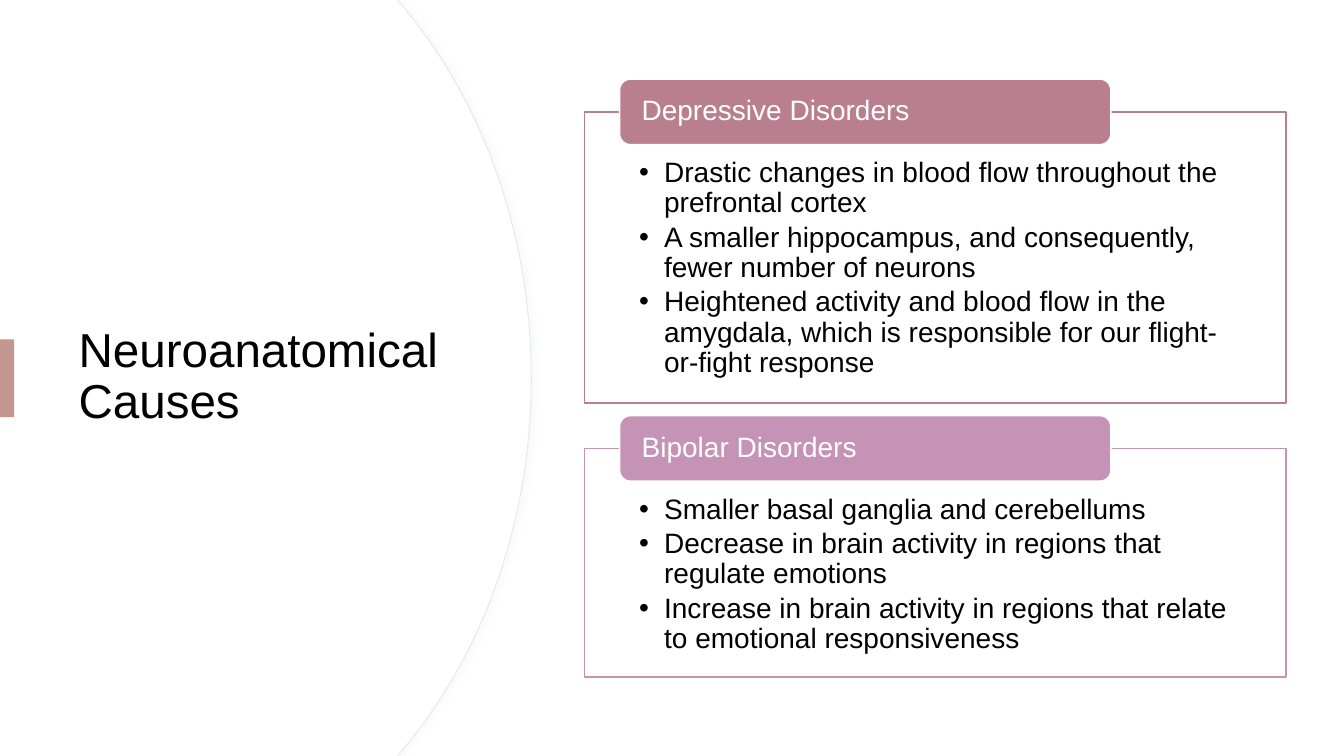
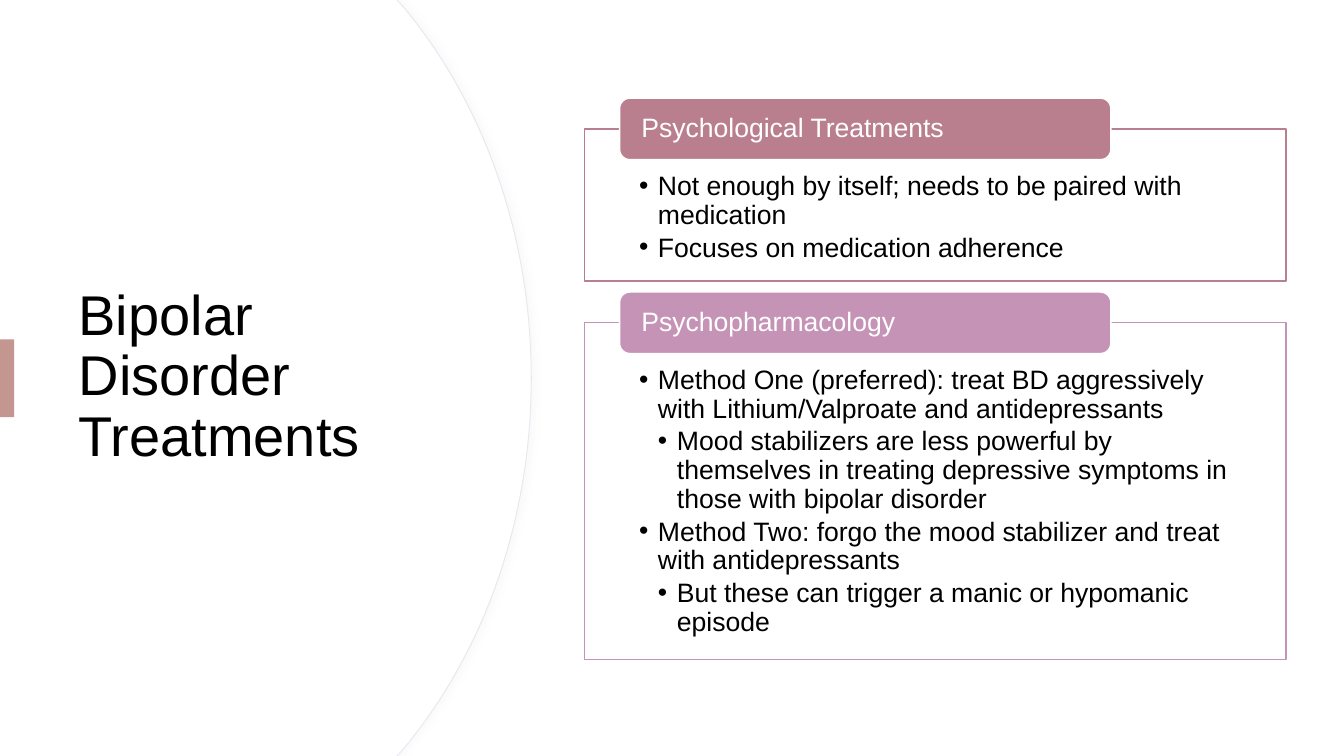
"""Build two slides that pair a curved title panel with two captioned bullet boxes."""
from lxml.etree import SubElement
from pptx import Presentation
from pptx.dml.color import RGBColor
from pptx.enum.shapes import MSO_SHAPE as Preset
from pptx.enum.text import MSO_ANCHOR as Anchor, MSO_AUTO_SIZE as AutoSize, PP_ALIGN as Align
from pptx.oxml.ns import qn
from pptx.util import Inches, Pt

FONT = "Arial"
WHITE, BLACK, HAIRLINE, SHADOW = "FFFFFF", "000000", "E5EAF0", "D9D9D9"
ACCENT = "C39790"
BOX_COLOURS = ["BA7F8F", "C593B6"]
BOX_LEFT, BOX_WIDTH = 43.5, 52.2
CAPTION_LEFT, CAPTION_WIDTH = 46.1, 36.55

SLIDES = [
    {
        "title": "Neuroanatomical Causes", "title_size": 34,
        "size": 20, "caption_rows": 8.67, "indent": 1.87, "top": 14.8, "gap": 1.65,
        "boxes": [
            ("Depressive Disorders", 38.53, [
                (0, "Drastic changes in blood flow throughout the prefrontal cortex"),
                (0, "A smaller hippocampus, and consequently, fewer number of neurons"),
                (0, "Heightened activity and blood flow in the amygdala, which is "
                    "responsible for our flight-or-fight response"),
            ]),
            ("Bipolar Disorders", 30.27, [
                (0, "Smaller basal ganglia and cerebellums"),
                (0, "Decrease in brain activity in regions that regulate emotions"),
                (0, "Increase in brain activity in regions that relate to emotional "
                    "responsiveness"),
            ]),
        ],
    },
    {
        "title": "Bipolar Disorder Treatments", "title_size": 40,
        "size": 19, "caption_rows": 8.13, "indent": 1.41, "top": 17.05, "gap": 1.45,
        "boxes": [
            ("Psychological Treatments", 20.13, [
                (0, "Not enough by itself; needs to be paired with medication"),
                (0, "Focuses on medication adherence"),
            ]),
            ("Psychopharmacology", 44.53, [
                (0, "Method One (preferred): treat BD aggressively with "
                    "Lithium/Valproate and antidepressants"),
                (1, "Mood stabilizers are less powerful by themselves in treating "
                    "depressive symptoms in those with bipolar disorder"),
                (0, "Method Two: forgo the mood stabilizer and treat with antidepressants"),
                (1, "But these can trigger a manic or hypomanic episode"),
            ]),
        ],
    },
]


def paint(target, fill, line=None, weight=1):
    """Give a shape or a font a flat colour, and a shape its outline."""
    target.fill.solid()
    target.fill.fore_color.rgb = RGBColor.from_string(fill)
    if hasattr(target, "shadow"):
        target.shadow.inherit = False
        if line:
            target.line.color.rgb = RGBColor.from_string(line)
            target.line.width = Pt(weight)
        else:
            target.line.fill.background()


def style(paragraph, size, colour):
    """Set the alignment, line spacing and font of a paragraph."""
    paragraph.alignment = Align.LEFT
    paragraph.line_spacing = 0.9
    for run in paragraph.runs:
        run.font.name = FONT
        run.font.size = Pt(size)
        paint(run.font, colour)


presentation = Presentation()
presentation.slide_width, presentation.slide_height = Inches(13.33), Inches(7.5)
column = presentation.slide_width / 100
row = presentation.slide_height / 100

for content in SLIDES:
    slide = presentation.slides.add_slide(presentation.slide_layouts[5])
    shapes = slide.shapes

    for edge, outline in [(39.53, HAIRLINE), (39.45, None)]:
        upper = [(edge - 9.98, 0), (edge - 9.45, 1.07), (edge - 3.6, 13.6), (edge, 30.93)]
        lower = [(x, 100 - y) for x, y in reversed(upper)]
        outline_points = upper + [(edge, 50)] + lower + [(0, 100)]
        builder = shapes.build_freeform(0, 0)
        builder.add_line_segments(
            [(round(x * column), round(y * row)) for x, y in outline_points])
        panel = builder.convert_to_shape()
        segments = list(panel.element.iter(qn("a:lnTo")))
        for first in (2, 5):
            curve, *others = segments[first:first + 3]
            bezier = curve.getparent().makeelement(qn("a:cubicBezTo"))
            curve.addprevious(bezier)
            for segment in (curve, *others):
                bezier.append(segment[0])
                segment.getparent().remove(segment)
        paint(panel, WHITE, outline, 0.75)
        if outline:
            effects = panel.element.spPr.find(qn("a:effectLst"))
            shadow = SubElement(effects, qn("a:outerShdw"), blurRad=str(Pt(4)),
                                dist=str(Pt(3)), dir="0", rotWithShape="0")
            tint = SubElement(shadow, qn("a:srgbClr"), val=SHADOW)
            SubElement(tint, qn("a:alpha"), val="12000")

    title = shapes.title
    panel.element.addnext(title.element)
    title.left, title.top = round(5.1 * column), round(16.95 * row)
    title.width, title.height = round(29.55 * column), round(66 * row)
    title.text_frame.text = content["title"]
    title.text_frame.word_wrap = True
    title.text_frame.auto_size = AutoSize.NONE
    title.text_frame.vertical_anchor = Anchor.MIDDLE
    style(title.text_frame.paragraphs[0], content["title_size"], BLACK)

    accent = shapes.add_shape(Preset.RECTANGLE, 0, round(44.9 * row),
                              round(1.05 * column), round(10.3 * row))
    paint(accent, ACCENT)

    size, caption_rows, top = content["size"], content["caption_rows"], content["top"]
    for (heading, box_rows, bullets), colour in zip(content["boxes"], BOX_COLOURS):
        box = shapes.add_shape(Preset.RECTANGLE, round(BOX_LEFT * column), round(top * row),
                               round(BOX_WIDTH * column), round(box_rows * row))
        paint(box, WHITE, colour)
        frame = box.text_frame
        frame.word_wrap = True
        frame.vertical_anchor = Anchor.TOP
        frame.margin_left = frame.margin_right = round(4.05 * column)
        frame.margin_top = round(0.71 * caption_rows * row)
        frame.margin_bottom = round(2 * row)
        frame.text = "\n".join(text for _, text in bullets)
        for paragraph, (level, _) in zip(frame.paragraphs, bullets):
            style(paragraph, size, BLACK)
            paragraph.level = level
            paragraph.space_after = Pt(0.15 * size)
            indent = round(content["indent"] * column)
            properties = paragraph._p.get_or_add_pPr()
            properties.set("marL", str(indent * (level + 1)))
            properties.set("indent", str(-indent))
            SubElement(properties, qn("a:buFont"), typeface=FONT)
            SubElement(properties, qn("a:buChar"), char="•")

        caption = shapes.add_shape(
            Preset.ROUNDED_RECTANGLE, round(CAPTION_LEFT * column),
            round((top - caption_rows / 2) * row),
            round(CAPTION_WIDTH * column), round(caption_rows * row))
        paint(caption, colour, WHITE)
        caption.text_frame.text = heading
        caption.text_frame.word_wrap = True
        caption.text_frame.vertical_anchor = Anchor.MIDDLE
        caption.text_frame.margin_left = round(1.4 * column)
        caption.text_frame.margin_top = caption.text_frame.margin_bottom = 0
        style(caption.text_frame.paragraphs[0], size, WHITE)
        top += box_rows + content["gap"] + caption_rows / 2

presentation.save("out.pptx")
